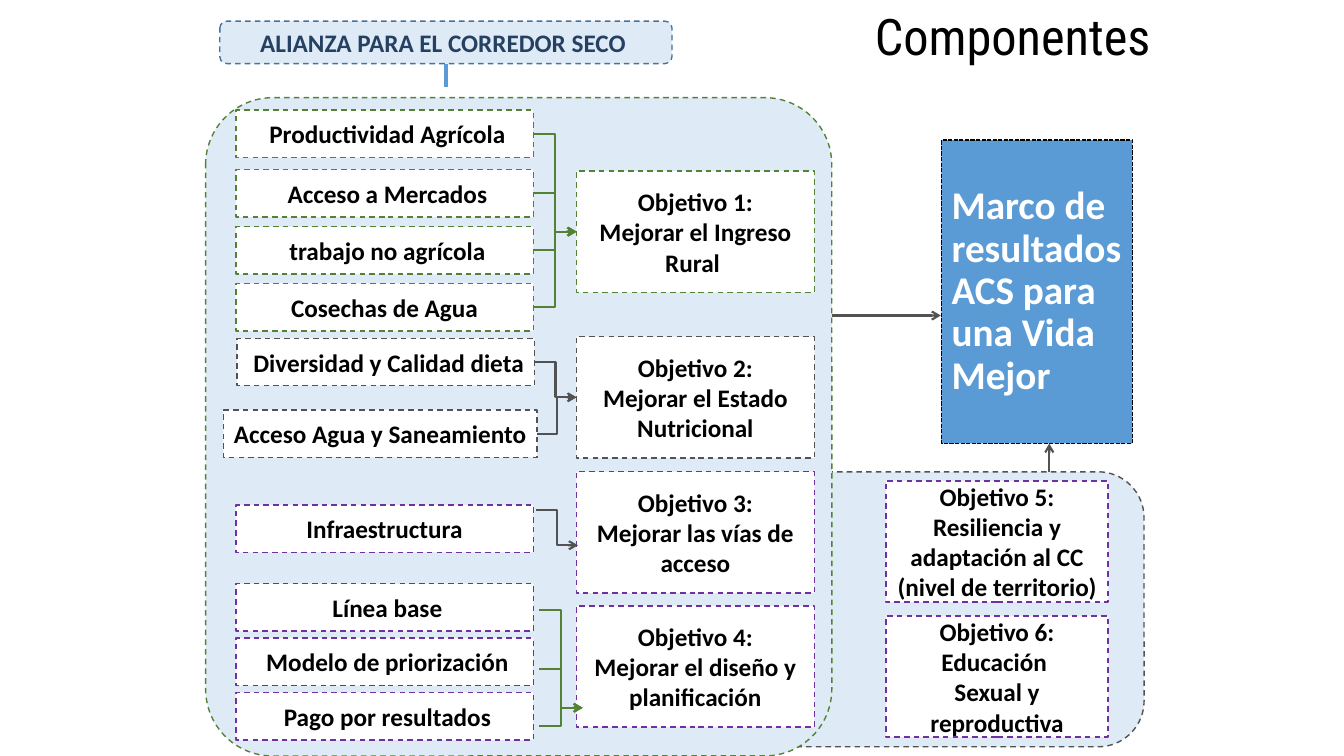
from pptx import Presentation
from pptx.dml.color import RGBColor
from pptx.enum.dml import MSO_LINE
from pptx.enum.shapes import MSO_CONNECTOR, MSO_SHAPE
from pptx.enum.text import MSO_ANCHOR, MSO_AUTO_SIZE, PP_ALIGN
from pptx.oxml.ns import qn
from pptx.util import Pt
from lxml.etree import SubElement

GREEN, GRAY, PURPLE = "548235", "525252", "7030A0"
BLUE, PALE, WHITE, BLACK = "5B9BD5", "DEEBF7", "FFFFFF", "000000"
COMPONENT_LEFT, COMPONENT_WIDTH, COMPONENT_HEIGHT = 168.5, 212.4, 33.9
GOAL_LEFT, GOAL_WIDTH, GOAL_HEIGHT = 411.8, 169.9, 86.6

# text, left, top, width
INCOME_COMPONENTS = [
    (" Productividad Agrícola", COMPONENT_LEFT, 78.7, COMPONENT_WIDTH),
    (" Acceso a Mercados", COMPONENT_LEFT, 121.2, COMPONENT_WIDTH),
    (" trabajo no agrícola", COMPONENT_LEFT, 162, COMPONENT_WIDTH),
    ("Cosechas de Agua", COMPONENT_LEFT, 202.5, COMPONENT_WIDTH),
]
NUTRITION_COMPONENTS = [
    (" Diversidad y Calidad dieta", 169.4, 241.6, COMPONENT_WIDTH),
    ("Acceso Agua y Saneamiento", 159.6, 292.8, 224),
]
PLANNING_COMPONENTS = [
    (" Infraestructura ", COMPONENT_LEFT, 360.7, COMPONENT_WIDTH),
    (" Línea base", COMPONENT_LEFT, 416.9, COMPONENT_WIDTH),
    (" Modelo de priorización", COMPONENT_LEFT, 455.8, COMPONENT_WIDTH),
    (" Pago por resultados", COMPONENT_LEFT, 494.6, COMPONENT_WIDTH),
]


def color(value):
    return RGBColor.from_string(value)


def style_text(para, size, value, font="Calibri", bold=True):
    for span in para.runs:
        span.font.name = font
        span.font.size = Pt(size)
        span.font.bold = bold
        span.font.color.rgb = color(value)


def style_area(shape, fill, line, dash=MSO_LINE.DASH):
    shape.fill.solid()
    shape.fill.fore_color.rgb = color(fill)
    shape.line.color.rgb = color(line)
    shape.line.width = Pt(1)
    shape.line.dash_style = dash


def add_box(page, area, line, text="", fill=WHITE, ink=BLACK, radius=None):
    """Add a dashed box, rounded when a radius ratio is given."""
    kind = MSO_SHAPE.RECTANGLE if radius is None else MSO_SHAPE.ROUNDED_RECTANGLE
    box = page.shapes.add_shape(kind, *[Pt(length) for length in area])
    if radius is not None:
        box.adjustments[0] = radius
    box.shadow.inherit = False
    style_area(box, fill, line)
    if text:
        box.text_frame.text = text
        box.text_frame.word_wrap = True
        box.text_frame.vertical_anchor = MSO_ANCHOR.MIDDLE
        for para in box.text_frame.paragraphs:
            para.alignment = PP_ALIGN.CENTER
            style_text(para, 18, ink)
    return box


def add_components(page, components, line):
    return [add_box(page, (left, top, width, COMPONENT_HEIGHT), line, text)
            for text, left, top, width in components]


def add_goal(page, top, line, text, left=GOAL_LEFT, width=GOAL_WIDTH):
    return add_box(page, (left, top, width, GOAL_HEIGHT), line, text)


def add_line(page, start, end, line, width=1.5, head="arrow",
             kind=MSO_CONNECTOR.STRAIGHT):
    connector = page.shapes.add_connector(kind, *[Pt(n) for n in start + end])
    connector.line.color.rgb = color(line)
    connector.line.width = Pt(width)
    if head:
        SubElement(connector.line._get_or_add_ln(), qn("a:tailEnd"), type=head)
    SubElement(connector._element.spPr, qn("a:effectLst"))
    return connector


def add_elbow(page, start, end, line, head="arrow"):
    return add_line(page, start, end, line, head=head, kind=MSO_CONNECTOR.ELBOW)


def join(page, component, goal, line, head="arrow"):
    """Lead an elbow from a component's right side to a goal's left side."""
    elbow = add_elbow(page, (0, 0), (1, 1), line, head)
    elbow.begin_connect(component, 3)
    elbow.end_connect(goal, 1)


def add_framework(page):
    """Turn the title placeholder into the results framework box."""
    title = page.shapes.title
    title.left, title.top = Pt(672.5), Pt(100.1)
    title.width, title.height = Pt(136.4), Pt(216.7)
    style_area(title, BLUE, BLACK, MSO_LINE.SQUARE_DOT)
    frame = title.text_frame
    frame.text = "Marco de resultados ACS para una Vida Mejor"
    frame.word_wrap = True
    frame.auto_size = MSO_AUTO_SIZE.NONE
    frame.vertical_anchor = MSO_ANCHOR.MIDDLE
    para = frame.paragraphs[0]
    para.alignment = PP_ALIGN.LEFT
    para.line_spacing = 0.9
    style_text(para, 28, WHITE)


def add_heading(page):
    heading = page.shapes.add_textbox(Pt(617.8), Pt(0), Pt(221.8), Pt(51))
    frame = heading.text_frame
    frame.text = "Componentes"
    frame.word_wrap = False
    frame.auto_size = MSO_AUTO_SIZE.SHAPE_TO_FIT_TEXT
    style_text(frame.paragraphs[0], 36, BLACK, "Roboto Condensed", False)


def main():
    deck = Presentation()
    deck.slide_width, deck.slide_height = Pt(960), Pt(540)
    page = deck.slides.add_slide(deck.slide_layouts[5])

    add_framework(page)
    add_heading(page)
    add_box(page, (484.6, 337, 332.6, 196.4), GRAY, fill=PALE, radius=0.167)
    add_box(page, (146.9, 69.8, 447.3, 470.2), GREEN, fill=PALE, radius=0.107)
    alliance = add_box(page, (157, 15.1, 323, 30.3), "43739E",
                       "ALIANZA PARA EL CORREDOR SECO ", PALE, "254061", 0.167)

    income = add_components(page, INCOME_COMPONENTS, GREEN)
    nutrition = add_components(page, NUTRITION_COMPONENTS, GRAY)
    add_components(page, PLANNING_COMPONENTS, PURPLE)

    income_goal = add_goal(page, 122.2, GREEN,
                           "Objetivo 1:\nMejorar el Ingreso Rural ")
    nutrition_goal = add_goal(page, 240.5, GRAY,
                              "Objetivo 2:\nMejorar el Estado Nutricional")
    add_goal(page, 336.9, PURPLE, "Objetivo 3:\nMejorar las vías de acceso")
    add_goal(page, 432.8, PURPLE, "Objetivo 4:\nMejorar el diseño y planificación")
    add_goal(page, 343.5, PURPLE, "Objetivo 5:\nResiliencia y adaptación al CC "
             "(nivel de territorio)", 632.9, 158.6)
    add_goal(page, 440, PURPLE, "Objetivo 6:\nEducación \nSexual y reproductiva",
             632.9, 158.6)

    stem = add_line(page, (318.5, 45.4), (318.5, 62.4), BLUE, 3, None)
    stem.begin_connect(alliance, 2)
    add_line(page, (594.2, 225.4), (672, 225.4), GRAY)
    add_line(page, (749.5, 337), (749.5, 316.8), GRAY)

    for index, component in enumerate(income):
        join(page, component, income_goal, GREEN, "arrow" if index else "triangle")
    join(page, nutrition[1], nutrition_goal, GRAY, "triangle")
    join(page, nutrition[0], nutrition_goal, GRAY)
    add_elbow(page, (383, 364.4), (412.8, 389.5), GRAY)
    for top, head in ((435.4, "triangle"), (478, "arrow"), (518.8, "arrow")):
        add_elbow(page, (385.2, top), (416.2, 505.6), GREEN, head)

    deck.save("out.pptx")


if __name__ == "__main__":
    main()
